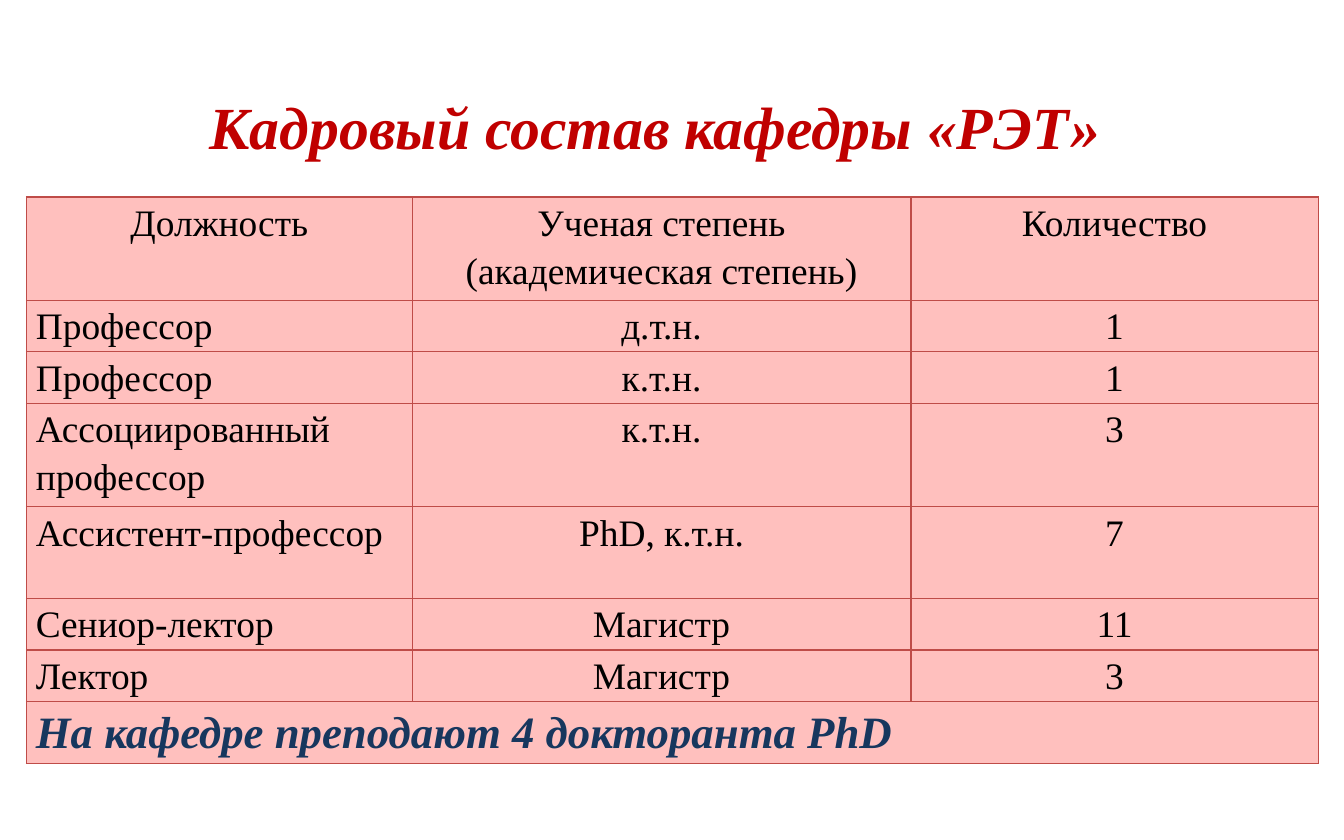
from dataclasses import dataclass

from lxml.etree import SubElement
from pptx import Presentation
from pptx.dml.color import RGBColor as RGB
from pptx.enum.text import MSO_ANCHOR as Anchor, MSO_AUTO_SIZE as AutoSize, PP_ALIGN as Align
from pptx.oxml.ns import qn
from pptx.util import Pt


@dataclass(frozen=True)
class Theme:
    """Colours and type sizes of the slide."""
    font: str = "Times New Roman"
    title: str = "C00000"
    body: str = "000000"
    note: str = "17375E"
    cell: str = "FFC0BE"
    border: str = "BF4C48"
    border_width: float = 0.75
    title_size: int = 32
    body_size: int = 20
    note_size: int = 24


THEME = Theme()
HEADING = "Кадровый состав кафедры «РЭТ» "
STAFF = [
    ("Должность", "Ученая степень (академическая степень)", "Количество"),
    ("Профессор", "д.т.н.", "1"),
    ("Профессор", "к.т.н.", "1"),
    ("Ассоциированный профессор", "к.т.н.", "3"),
    ("Ассистент-профессор", "PhD, к.т.н.", "7"),
    ("Сениор-лектор", "Магистр", "11"),
    ("Лектор", "Магистр", "3"),
]
DOCTORAL_NOTE = "На кафедре преподают 4 докторанта PhD"
COLUMN_SHARES = (2.87, 3.71, 3.03)
SINGLE, DOUBLE = 27.6, 55.2
ROW_HEIGHTS = (DOUBLE, SINGLE, SINGLE, DOUBLE, 49.2, SINGLE, SINGLE, 33.2)


def write(paragraph, text, size, color, align, emphasis=False):
    """Add one styled run to a paragraph."""
    paragraph.alignment = align
    run = paragraph.add_run()
    run.text = text
    font = run.font
    font.name, font.size = THEME.font, Pt(size)
    font.bold = font.italic = emphasis
    font.color.rgb = RGB.from_string(color)


def style_cell(cell):
    """Give a cell its fill, margins and four borders."""
    cell.fill.solid()
    cell.fill.fore_color.rgb = RGB.from_string(THEME.cell)
    cell.margin_left = cell.margin_right = Pt(5)
    cell.margin_top = cell.margin_bottom = 0
    cell.vertical_anchor = Anchor.TOP
    properties = cell._tc.get_or_add_tcPr()
    for position, side in enumerate(("lnL", "lnR", "lnT", "lnB")):
        line = SubElement(properties, qn(f"a:{side}"), w=str(Pt(THEME.border_width)))
        fill = SubElement(line, qn("a:solidFill"))
        SubElement(fill, qn("a:srgbClr"), val=THEME.border)
        properties.insert(position, line)


def add_heading(slide, left, top, width, height):
    """Place the centred heading in the given box."""
    frame = slide.shapes.add_textbox(Pt(left), Pt(top), Pt(width), Pt(height)).text_frame
    frame.word_wrap = True
    frame.auto_size = AutoSize.SHAPE_TO_FIT_TEXT
    write(frame.paragraphs[0], HEADING, THEME.title_size, THEME.title, Align.CENTER, True)


def add_staff_table(slide, left, top, width):
    """Place the staff table with its merged closing note."""
    table = slide.shapes.add_table(
        len(ROW_HEIGHTS), len(COLUMN_SHARES), Pt(left), Pt(top), Pt(width), Pt(sum(ROW_HEIGHTS))
    ).table
    for column, share in zip(table.columns, COLUMN_SHARES):
        column.width = Pt(width * share / sum(COLUMN_SHARES))
    for row, height in zip(table.rows, ROW_HEIGHTS):
        row.height = Pt(height)
    for cell in table.iter_cells():
        style_cell(cell)
    for r, entries in enumerate(STAFF):
        for c, entry in enumerate(entries):
            paragraph = table.cell(r, c).text_frame.paragraphs[0]
            paragraph.line_spacing = 1.15
            align = Align.LEFT if r and not c else Align.CENTER
            write(paragraph, entry, THEME.body_size, THEME.body, align)
    last = len(STAFF)
    note = table.cell(last, 0)
    note.merge(table.cell(last, len(COLUMN_SHARES) - 1))
    paragraph = note.text_frame.paragraphs[0]
    paragraph.line_spacing = 1.15
    write(paragraph, DOCTORAL_NOTE, THEME.note_size, THEME.note, Align.LEFT, True)


def main():
    """Build and save the slide."""
    deck = Presentation()
    deck.slide_width, deck.slide_height = Pt(720), Pt(450)
    slide = deck.slides.add_slide(deck.slide_layouts[6])
    add_heading(slide, 33, 44.6, 644, 46)
    add_staff_table(slide, 14.2, 105.6, 692)
    deck.save("out.pptx")


if __name__ == "__main__":
    main()
